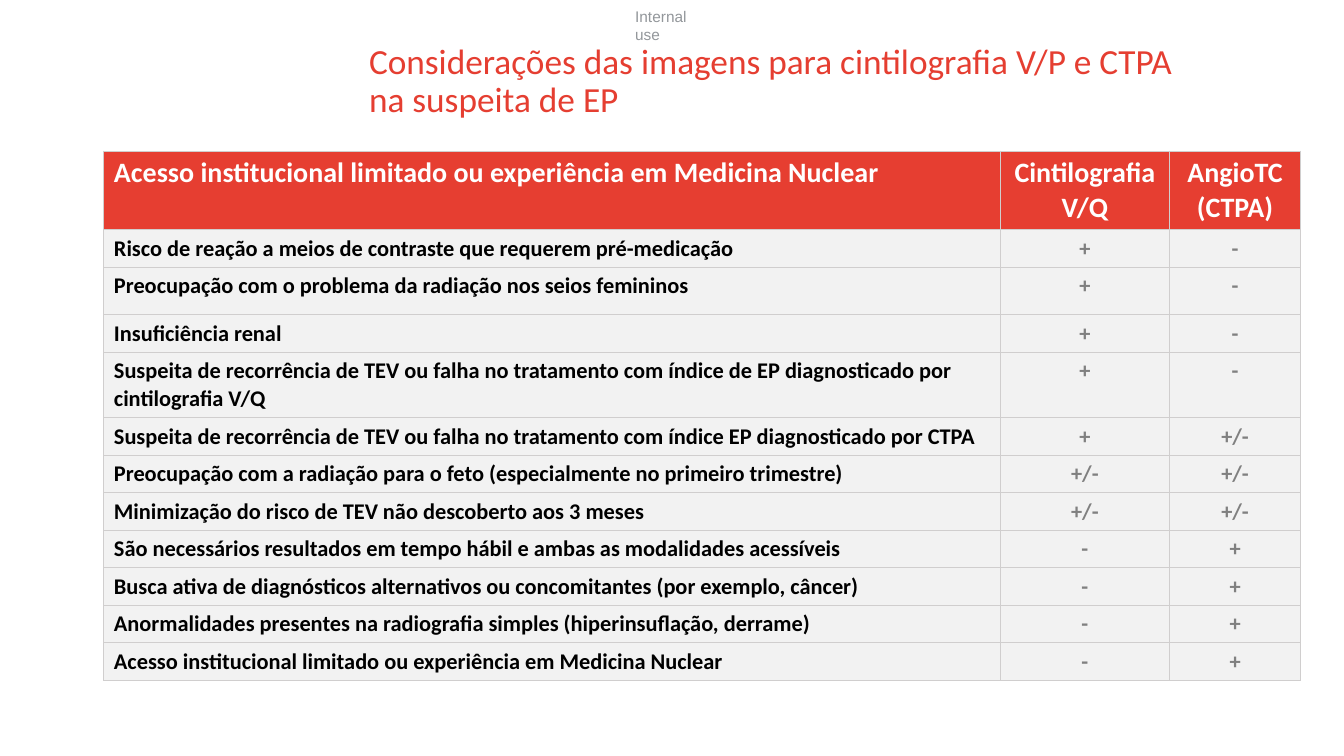
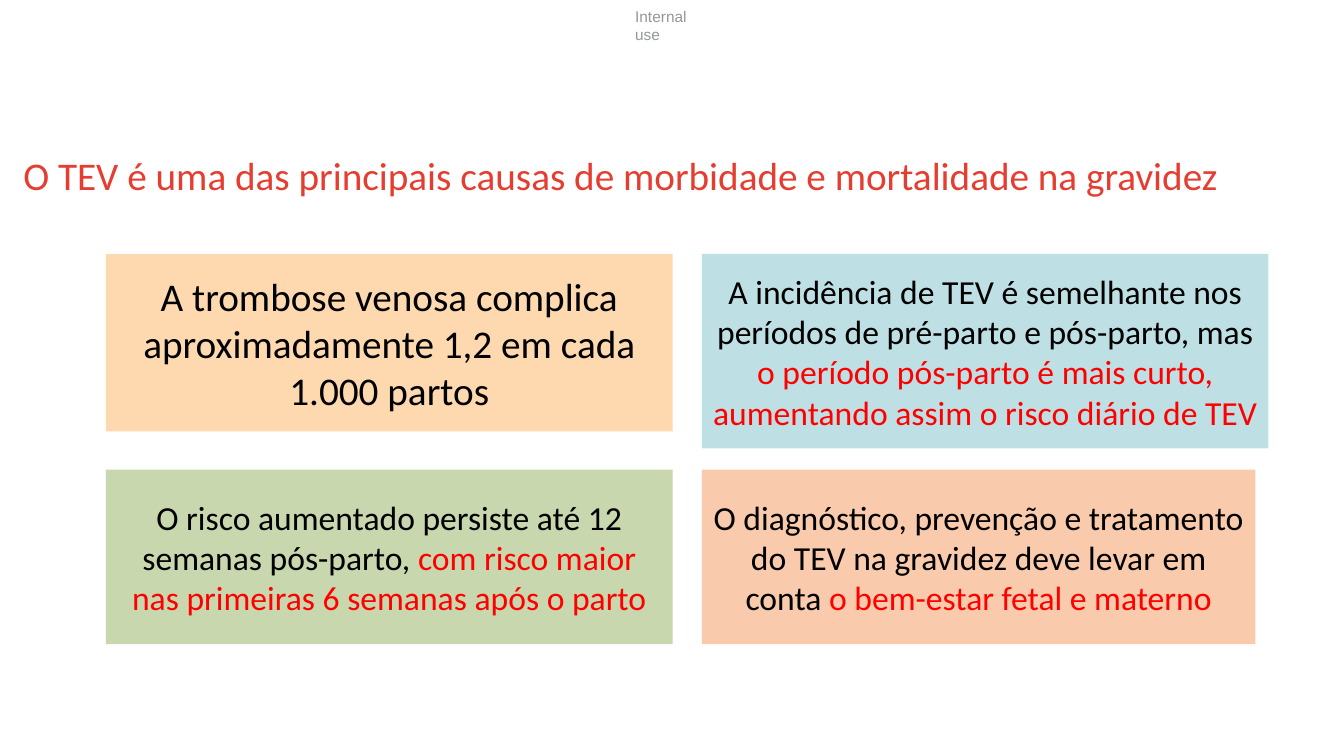
from lxml.etree import SubElement
from pptx import Presentation
from pptx.dml.color import RGBColor
from pptx.enum.shapes import MSO_SHAPE
from pptx.enum.text import MSO_ANCHOR, MSO_AUTO_SIZE, PP_ALIGN
from pptx.oxml import parse_xml
from pptx.oxml.ns import nsdecls, qn
from pptx.util import Inches, Pt

WIDTH, HEIGHT = Inches(13.33), Inches(7.5)
COLUMN, ROW = WIDTH / 100, HEIGHT / 100  # grid of 100 by 100
TITLE_RED, HEADER_RED, ALERT_RED = "E53E31", "E63E31", "FF0000"
BLACK, WHITE, SIGN_GREY, LABEL_GREY = "000000", "FFFFFF", "808080", "93979B"
ROW_GREY, BORDER_GREY = "F2F2F2", "D0CECE"


def paint(fill, color):
    fill.solid()
    fill.fore_color.rgb = RGBColor.from_string(color)


def write(frame, *parts, size, color=BLACK, accent=ALERT_RED, font="Calibri",
          bold=False, align=PP_ALIGN.LEFT, spacing=None, margin=None,
          anchor=MSO_ANCHOR.TOP):
    """Write one paragraph; the parts after the first take the accent colour."""
    frame.word_wrap = True
    frame.vertical_anchor = anchor
    if margin is not None:
        frame.margin_left = frame.margin_right = margin
        frame.margin_top = frame.margin_bottom = margin
    paragraph = frame.paragraphs[0]
    paragraph.alignment = align
    paragraph.line_spacing = spacing
    for position, part in enumerate(parts):
        for number, line in enumerate(part.split("\n")):
            if number:
                paragraph.add_line_break()
            run = paragraph.add_run()
            run.text = line
            run.font.name, run.font.size, run.font.bold = font, Pt(size), bold
            paint(run.font.fill, accent if position else color)


prs = Presentation()
prs.slide_width, prs.slide_height = WIDTH, HEIGHT
layout = prs.slide_layouts[5]

# Slides with their titles: text, size, left, top, width, height
titles = [
    ("Considerações das imagens para cintilografia V/P e CTPA \nna suspeita de EP",
     25.2, 27.46, 5.87, 62.94, 10.53),
    ("O TEV é uma das principais causas de morbidade e mortalidade na gravidez",
     28, 1.73, 20.67, 98.2, 6.13),
]
for text, size, left, top, width, height in titles:
    title = prs.slides.add_slide(layout).shapes.title
    title.left, title.top = int(left * COLUMN), int(top * ROW)
    title.width, title.height = int(width * COLUMN), int(height * ROW)
    title.text_frame.auto_size = MSO_AUTO_SIZE.NONE
    write(title.text_frame, text, size=size, color=TITLE_RED, spacing=0.9, margin=0)
imaging, pregnancy = prs.slides

# Confidentiality label, moved to the layout that both slides share
label = imaging.shapes.add_textbox(int(47.26 * COLUMN), int(0.93 * ROW),
                                   int(5.85 * COLUMN), int(2.4 * ROW))
write(label.text_frame, "Internal use", size=11, color=LABEL_GREY, font="Arial", margin=0)
label.text_frame.auto_size = MSO_AUTO_SIZE.SHAPE_TO_FIT_TEXT
label.element.nvSpPr.cNvPr.set("id", "20")
layout.shapes.element.append(label.element)

# Comparison table
criteria = [
    ("Acesso institucional limitado ou experiência em Medicina Nuclear",
     "Cintilografia V/Q", "AngioTC (CTPA)"),
    ("Risco de reação a meios de contraste que requerem pré-medicação", "+", "-"),
    ("Preocupação com o problema da radiação nos seios femininos", "+", "-"),
    ("Insuficiência renal", "+", "-"),
    ("Suspeita de recorrência de TEV ou falha no tratamento com índice de EP "
     "diagnosticado por cintilografia V/Q", "+", "-"),
    ("Suspeita de recorrência de TEV ou falha no tratamento com índice EP "
     "diagnosticado por CTPA", "+", "+/-"),
    ("Preocupação com a radiação para o feto (especialmente no primeiro trimestre)",
     "+/-", "+/-"),
    ("Minimização do risco de TEV não descoberto aos 3 meses", "+/-", "+/-"),
    ("São necessários resultados em tempo hábil e ambas as modalidades acessíveis",
     "-", "+"),
    ("Busca ativa de diagnósticos alternativos ou concomitantes (por exemplo, câncer)",
     "-", "+"),
    ("Anormalidades presentes na radiografia simples (hiperinsuflação, derrame)",
     "-", "+"),
    ("Acesso institucional limitado ou experiência em Medicina Nuclear", "-", "+"),
]
column_shares = [66.69, 12.6, 9.75]
row_shares = [10.4, 4.93, 6.27, 4.93, 8.67] + [4.93] * 7
comparison = imaging.shapes.add_table(
    len(criteria), len(column_shares), int(7.73 * COLUMN), int(20 * ROW),
    int(sum(column_shares) * COLUMN), int(sum(row_shares) * ROW)).table
comparison.horz_banding = False
for column, share in zip(comparison.columns, column_shares):
    column.width = int(share * COLUMN)
for row, share in zip(comparison.rows, row_shares):
    row.height = int(share * ROW)

for r, criterion in enumerate(criteria):
    for c, text in enumerate(criterion):
        cell = comparison.cell(r, c)
        paint(cell.fill, ROW_GREY if r else HEADER_RED)
        body_color = SIGN_GREY if c else BLACK
        write(cell.text_frame, text, size=16 if r else 20, bold=True,
              color=body_color if r else WHITE,
              align=PP_ALIGN.CENTER if c else PP_ALIGN.LEFT)
        # Borders come before the fill in the cell properties
        for place, side in enumerate(("lnL", "lnR", "lnT", "lnB")):
            border = parse_xml(f'<a:{side} {nsdecls("a")} w="{Pt(1)}"/>')
            solid = SubElement(border, qn("a:solidFill"))
            SubElement(solid, qn("a:srgbClr"), val=BORDER_GREY)
            cell._tc.get_or_add_tcPr().insert(place, border)

# Four key messages in two columns and two rows: fill, size, width, height, text
messages = [
    ("FED9B0", 28, 42.16, 23.47,
     ["A trombose venosa complica aproximadamente 1,2 em cada 1.000 partos"]),
    ("BEE0E4", 24, 42.16, 25.73,
     ["A incidência de TEV é semelhante nos períodos de pré-parto e pós-parto, mas ",
      "o período pós-parto é mais curto, aumentando assim o risco diário de TEV"]),
    ("C9D7AF", 24, 42.16, 23.07,
     ["O risco aumentado persiste até 12 semanas pós-parto, ",
      "com risco maior nas primeiras 6 semanas após o parto"]),
    ("F9CBAC", 24, 41.19, 23.07,
     ["O diagnóstico, prevenção e tratamento do TEV na gravidez deve levar em conta ",
      "o bem-estar fetal e materno"]),
]
for index, (color, size, width, height, parts) in enumerate(messages):
    r, c = divmod(index, 2)
    message = pregnancy.shapes.add_shape(
        MSO_SHAPE.RECTANGLE, int((7.88 + 44.34 * c) * COLUMN),
        int((33.6 + 28.53 * r) * ROW), int(width * COLUMN), int(height * ROW))
    message.shadow.inherit = False
    message.line.fill.background()
    paint(message.fill, color)
    write(message.text_frame, *parts, size=size, align=PP_ALIGN.CENTER,
          anchor=MSO_ANCHOR.MIDDLE)

prs.save("out.pptx")
